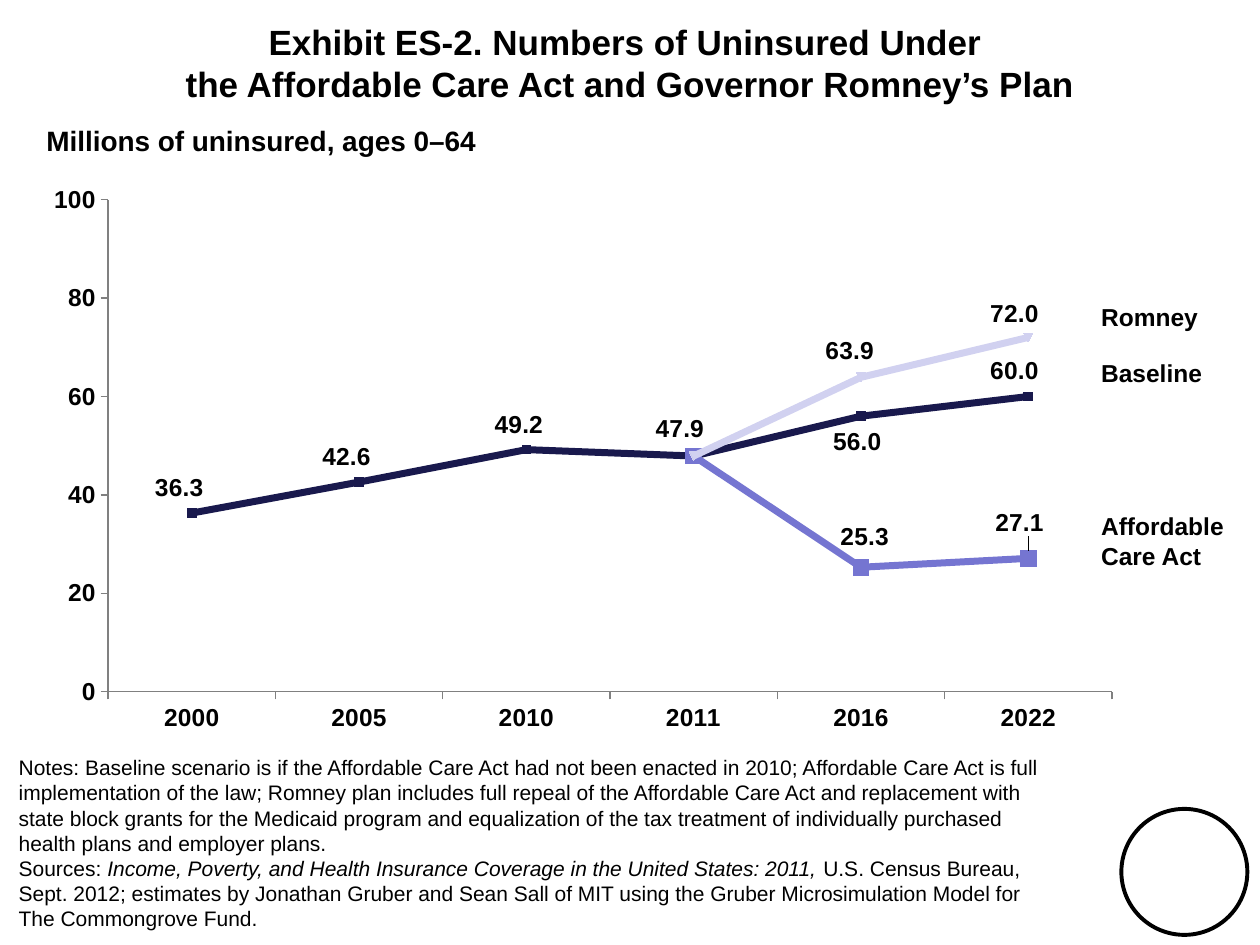
from lxml import etree
from pptx import Presentation
from pptx.chart.data import CategoryChartData
from pptx.dml.color import RGBColor
from pptx.enum.chart import XL_CHART_TYPE as ChartType
from pptx.enum.chart import XL_LABEL_POSITION as LabelPos
from pptx.enum.chart import XL_MARKER_STYLE as Marker
from pptx.enum.chart import XL_TICK_MARK as Tick
from pptx.enum.shapes import MSO_SHAPE as Shape
from pptx.enum.text import MSO_ANCHOR as Anchor
from pptx.enum.text import PP_ALIGN as Align
from pptx.oxml.ns import qn
from pptx.util import Inches, Pt

COLORS = {"text": "000000", "axis": "808080", "baseline": "19194D",
          "aca": "7575D1", "romney": "D1D1F0"}


def rgb(name):
    return RGBColor.from_string(COLORS[name])


class ExhibitSlide:
    font_name = "Arial"

    def __init__(self, prs):
        self.slide = prs.slides.add_slide(prs.slide_layouts[6])

    def style_font(self, font, **values):
        for key, value in {"name": self.font_name, **values}.items():
            setattr(font, key, value)
        font.color.rgb = rgb("text")

    def text(self, box, paragraphs, size, bold=False, align=Align.LEFT, anchor=Anchor.TOP):
        """Each paragraph is a list of (text, italic) pairs; a newline is a line break."""
        frame = self.slide.shapes.add_textbox(*map(Inches, box)).text_frame
        frame.word_wrap = True
        frame.vertical_anchor = anchor
        for i, runs in enumerate(paragraphs):
            para = frame.paragraphs[0] if i == 0 else frame.add_paragraph()
            para.alignment = align
            for content, italic in runs:
                for j, line in enumerate(content.split("\n")):
                    if j:
                        para.add_line_break()
                    run = para.add_run()
                    run.text = line
                    self.style_font(run.font, size=Pt(size), bold=bold, italic=italic)

    def ring(self, box, width):
        ring = self.slide.shapes.add_shape(Shape.OVAL, *map(Inches, box))
        ring.shadow.inherit = False
        ring.fill.background()
        ring.line.color.rgb = rgb("text")
        ring.line.width = Pt(width)

    def manual_layout(self, parent, index, **values):
        for old in parent.findall(qn("c:layout")):
            parent.remove(old)
        layout = etree.Element(qn("c:layout"))
        manual = etree.SubElement(layout, qn("c:manualLayout"))
        for tag, value in values.items():
            etree.SubElement(manual, qn(f"c:{tag}")).set("val", str(value))
        parent.insert(index, layout)

    def line_chart(self, box, years, lines, plot):
        data = CategoryChartData(number_format="#,##0.0")
        data.categories = years
        for line in lines:
            data.add_series(line["name"], line["values"])
        chart = self.slide.shapes.add_chart(
            ChartType.LINE_MARKERS, *map(Inches, box), data).chart
        chart.has_legend = False
        chart.has_title = False
        self.style_font(chart.font, size=Pt(14), bold=True)
        self.manual_layout(
            chart._chartSpace.chart.plotArea, 0, layoutTarget="inner", xMode="edge",
            yMode="edge", **dict(zip("xywh", plot)))

        for axis in (chart.category_axis, chart.value_axis):
            axis.has_major_gridlines = False
            axis.major_tick_mark = Tick.OUTSIDE
            axis.minor_tick_mark = Tick.NONE
            axis.format.line.color.rgb = rgb("axis")
            axis.format.line.width = Pt(0.75)
        scale = {"minimum_scale": 0, "maximum_scale": 100, "major_unit": 20}
        for key, value in scale.items():
            setattr(chart.value_axis, key, value)
        chart.value_axis.tick_labels.number_format = "0"
        chart.value_axis.tick_labels.number_format_is_linked = False

        for line, series in zip(lines, chart.plots[0].series):
            self.style_series(series, line, box)

    def style_series(self, series, line, box):
        color = rgb(line["color"])
        series.smooth = False
        series.format.line.color.rgb = color
        series.format.line.width = Pt(4)
        marker = series.marker
        if "marker" in line:
            marker.style = line["marker"]
        marker.size = line["marker_size"]
        marker.format.fill.solid()
        marker.format.fill.fore_color.rgb = color
        marker.format.line.color.rgb = color

        labels = series.data_labels
        labels.show_value = False
        labels.number_format = "#,##0.0"
        labels.number_format_is_linked = False
        # Label shifts are in inches from the default place
        for point, (side, dx, dy) in line["labels"].items():
            series.points[point].data_label.position = side
            label = next(d for d in labels._element.findall(qn("c:dLbl"))
                         if d.find(qn("c:idx")).get("val") == str(point))
            self.manual_layout(label, 1, x=round(dx / box[2], 4), y=round(dy / box[3], 4))


UP, DOWN = LabelPos.ABOVE, LabelPos.BELOW
YEARS = ["2000", "2005", "2010", "2011", "2016", "2022"]
LINES = [
    {"name": "Baseline", "color": "baseline", "marker": Marker.SQUARE, "marker_size": 5,
     "values": [36.3, 42.6, 49.2, 47.9, 56.0, 60.0],
     "labels": {0: (UP, -0.1, -0.02), 1: (UP, -0.1, -0.02), 2: (UP, -0.06, -0.01),
                4: (DOWN, -0.03, 0.02), 5: (UP, -0.11, -0.02)}},
    {"name": "Affordable Care Act", "color": "aca", "marker": Marker.SQUARE,
     "marker_size": 9, "values": [None, None, None, 47.9, 25.3, 27.1],
     "labels": {4: (UP, 0.03, -0.03), 5: (UP, -0.07, -0.07)}},
    {"name": "Romney", "color": "romney", "marker_size": 5,
     "values": [None, None, None, 47.9, 63.9, 72.0],
     "labels": {3: (UP, -0.11, -0.03), 4: (UP, -0.09, -0.03), 5: (UP, -0.11, 0)}},
]
NOTES = [
    [("Notes: Baseline scenario is if the Affordable Care Act had not been enacted in 2010; "
      "Affordable Care Act is full implementation of the law; Romney plan includes full "
      "repeal of the Affordable Care Act and replacement with \nstate block grants for the "
      "Medicaid program and equalization of the tax treatment of individually purchased "
      "\nhealth plans and employer plans.", False)],
    [("Sources: ", False),
     ("Income, Poverty, and Health Insurance Coverage in the United States: 2011,", True),
     (" U.S. Census Bureau, \nSept. 2012; estimates by Jonathan Gruber and Sean Sall of MIT "
      "using the Gruber Microsimulation Model for \nThe Commongrove Fund.", False)],
]
LINE_NAMES = [("Romney", 2.35, 1.08, 0.34), ("Baseline", 2.79, 1.08, 0.34),
              ("Affordable Care Act", 4.01, 1.19, 0.57)]


def main():
    prs = Presentation()
    prs.slide_width, prs.slide_height = Inches(10), Inches(7.5)
    exhibit = ExhibitSlide(prs)

    # Publisher's mark
    exhibit.ring((8.9, 6.42, 1, 1), 2.25)

    # Heading, unit and notes
    exhibit.text((0, 0.1, 10, 0.8),
                 [[("Exhibit ES-2. Numbers of Uninsured Under \n"
                    "the Affordable Care Act and Governor Romney’s Plan", False)]],
                 20, True, Align.CENTER, Anchor.MIDDLE)
    exhibit.text((0.27, 0.93, 3.64, 0.37),
                 [[("Millions of uninsured, ages 0–64", False)]], 16, True)
    exhibit.text((0.05, 5.94, 8.78, 1.51), NOTES, 12)

    # Chart and the names of its lines
    exhibit.line_chart((0.28, 1.42, 9.33, 4.45), YEARS, LINES, (0.062, 0.037, 0.854, 0.878))
    for name, top, width, height in LINE_NAMES:
        exhibit.text((8.64, top, width, height), [[(name, False)]], 14, True)

    prs.save("out.pptx")


if __name__ == "__main__":
    main()
